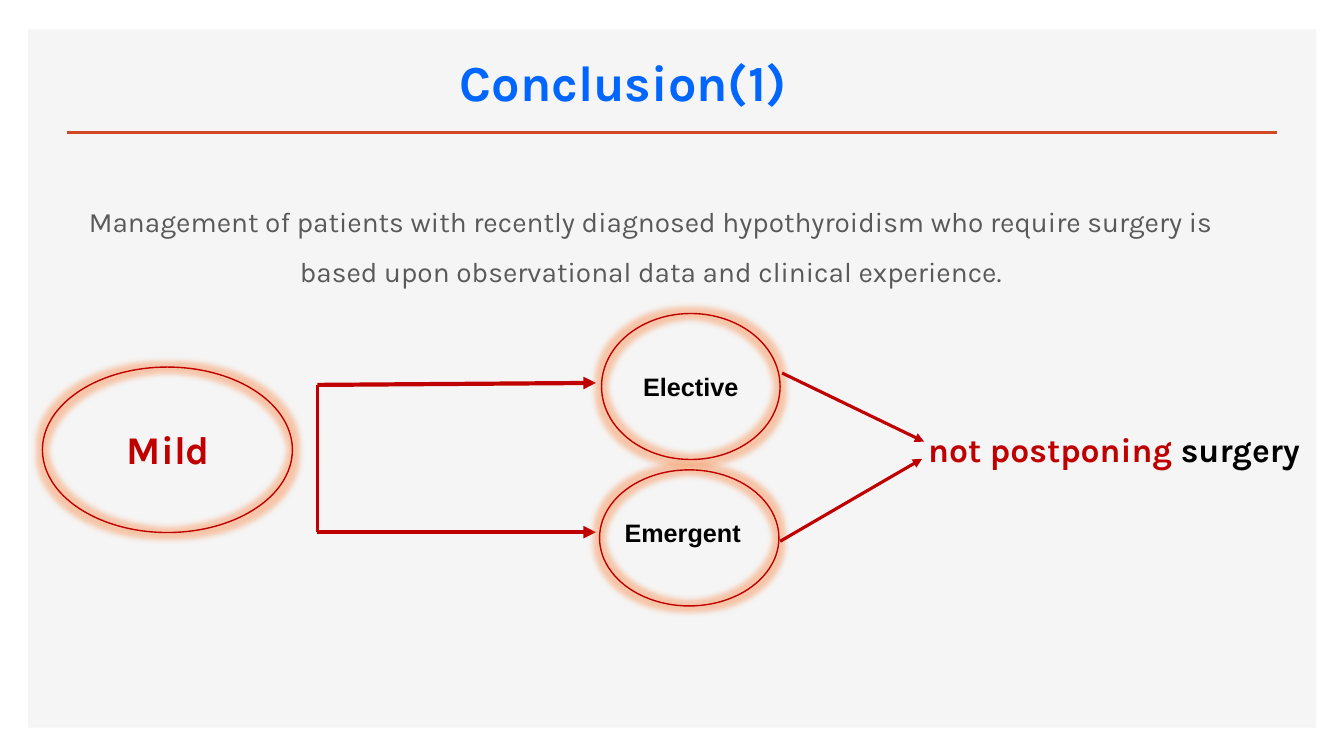
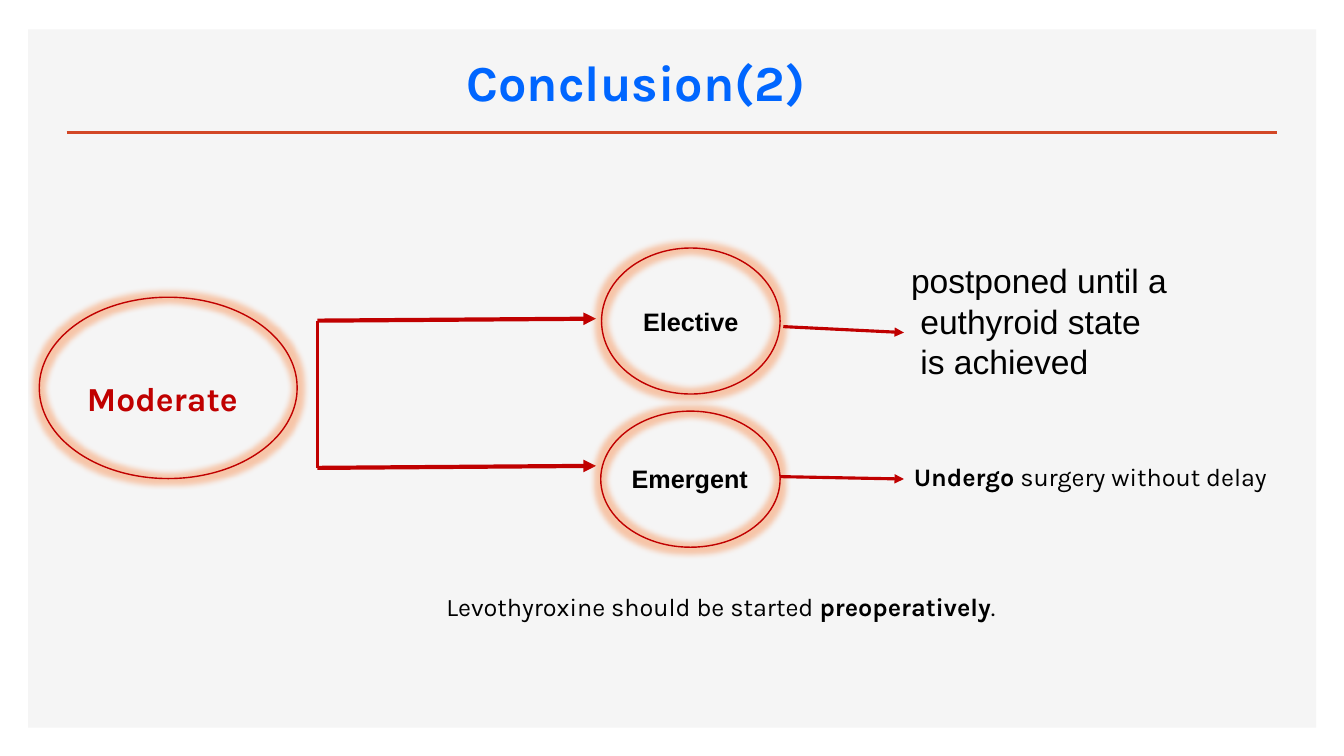
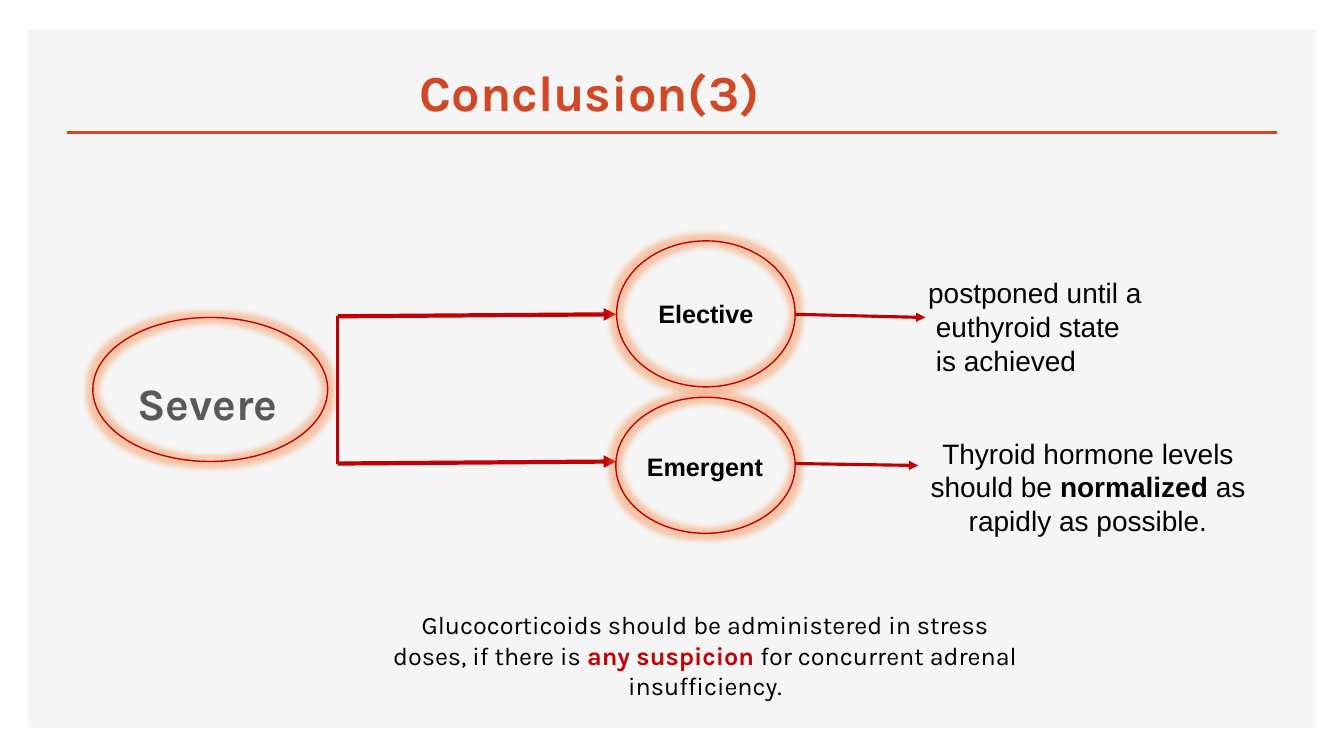
from pptx import Presentation
from pptx.dml.color import RGBColor
from pptx.enum.shapes import MSO_CONNECTOR, MSO_SHAPE
from pptx.enum.text import MSO_ANCHOR as ANCHOR, PP_ALIGN as ALIGN
from pptx.oxml import parse_xml
from pptx.oxml.ns import nsdecls, qn
from pptx.util import Cm, Pt
from lxml import etree

COLORS = {
    "panel": "F5F5F5", "orange": "D24726", "blue": "0066FF", "red": "C00000",
    "gray": "595959", "black": "000000", "glow": "F97E36",
}
HEAD, BODY = "Karla", "Arial"


def rgb(name):
    return RGBColor.from_string(COLORS[name])


class Deck:
    """Holds the style and the current slide. All lengths are in centimetres."""

    def __init__(self):
        self.prs = Presentation()
        self.prs.slide_width, self.prs.slide_height = Cm(33.87), Cm(19.05)
        self.s = None

    def slide(self, title, x, y=1.17, color="blue"):
        """Start a slide with the shared panel, rule and title."""
        self.s = self.prs.slides.add_slide(self.prs.slide_layouts[6])
        panel = self.shape(MSO_SHAPE.RECTANGLE, 0.71, 0.74, 32.46, 17.6)
        panel.fill.solid()
        panel.fill.fore_color.rgb = rgb("panel")
        panel.line.fill.background()
        self.line((1.68, 3.33), (32.18, 3.33), 2, "orange")
        self.text((x, y, 19.1, 1.78), [[(title, color, True)]], 36,
                  align=ALIGN.CENTER, anchor=ANCHOR.BOTTOM)

    def shape(self, kind, x, y, w, h):
        sp = self.s.shapes.add_shape(kind, Cm(x), Cm(y), Cm(w), Cm(h))
        sp.shadow.inherit = False
        return sp

    def add_runs(self, tf, paras, size, font, align, anchor, spacing=None):
        """Fill a frame; each paragraph is a list of (text, colour, bold) runs."""
        tf.vertical_anchor = anchor
        for i, runs in enumerate(paras):
            p = tf.paragraphs[0] if i == 0 else tf.add_paragraph()
            p.alignment = align
            if spacing:
                p.line_spacing = spacing
            for words, color, bold in runs:
                r = p.add_run()
                r.text = words
                r.font.size, r.font.name, r.font.bold = Pt(size), font, bold
                r.font.color.rgb = rgb(color)

    def text(self, box, paras, size, font=HEAD, align=ALIGN.LEFT,
             anchor=ANCHOR.TOP, spacing=None, wrap=True):
        tf = self.s.shapes.add_textbox(*map(Cm, box)).text_frame
        tf.word_wrap = wrap
        self.add_runs(tf, paras, size, font, align, anchor, spacing)

    def oval(self, x, y, w, h, runs=None, size=18, font=BODY,
             align=ALIGN.CENTER, spacing=None):
        """Outlined ellipse with a soft glow."""
        sp = self.shape(MSO_SHAPE.OVAL, x, y, w, h)
        sp.fill.background()
        sp.line.color.rgb, sp.line.width = rgb("red"), Pt(1)
        effects = sp._element.spPr.find(qn("a:effectLst"))
        effects.append(parse_xml(
            f'<a:glow {nsdecls("a")} rad="101600"><a:srgbClr val="{COLORS["glow"]}">'
            '<a:alpha val="40000"/></a:srgbClr></a:glow>'))
        if runs:
            self.add_runs(sp.text_frame, [runs], size, font, align, ANCHOR.MIDDLE,
                          spacing)

    def line(self, start, end, width=2.25, color="red", arrow=False):
        c = self.s.shapes.add_connector(MSO_CONNECTOR.STRAIGHT, *map(Cm, start + end))
        c.line.color.rgb, c.line.width = rgb(color), Pt(width)
        sp_pr = c._element.spPr
        if arrow:
            etree.SubElement(sp_pr.find(qn("a:ln")), qn("a:tailEnd"), type="triangle")
        etree.SubElement(sp_pr, qn("a:effectLst"))

    def fork(self, x, y, low_rise=0.05):
        """Vertical spine with one arrow to each kind of surgery."""
        low = y + 3.71
        self.line((x, y), (x, low))
        self.line((x, y), (x + 7.02, y - 0.05), 3, arrow=True)
        self.line((x, low), (x + 7.02, low - low_rise), 3, arrow=True)

    def surgeries(self, elective, emergent, label):
        """Elective and emergent ovals, given their top left corners."""
        self.oval(*elective, 4.5, 3.68, [("Elective", "black", True)])
        self.oval(*emergent, 4.52, 3.43)
        self.text((*label, 3.48, 1.02), [[("Emergent", "black", True)]], 18,
                  BODY, wrap=False)

    def postponed(self, x, y, size):
        lines = ("postponed until a", " euthyroid state", " is achieved")
        self.text((x, y, 9.5, 3.2), [[(t, "black", False)] for t in lines], size, BODY)


def main():
    d = Deck()

    # Mild
    d.slide("Conclusion(1)", 6.15)
    d.text((1.07, 4.6, 30.68, 3), [[(
        "Management of patients with recently diagnosed hypothyroidism who require "
        "surgery is based upon observational data and clinical experience.",
        "gray", False)]], 20, align=ALIGN.CENTER, spacing=1.5)
    d.oval(1.07, 9.25, 6.3, 4.17)
    d.text((2.95, 10.59, 2.67, 1.45), [[("Mild", "red", True)]], 28, wrap=False)
    d.fork(8, 9.7, low_rise=0)
    d.surgeries((15.16, 7.9), (15.11, 11.84), (15.49, 12.9))
    d.line((19.71, 9.4), (23.29, 11.13), arrow=True)
    d.line((19.66, 13.64), (23.24, 11.56), arrow=True)
    d.text((23.14, 10.69, 10.19, 1.27),
           [[("not postponing ", "red", True), ("surgery", "black", True)]], 24)

    # Moderate
    d.slide("Conclusion(2)", 6.48)
    d.oval(0.99, 7.49, 6.5, 4.57, [("Moderate", "red", True)], 24, HEAD,
           ALIGN.LEFT, 1.5)
    d.fork(8, 8.08)
    d.surgeries((15.16, 6.25), (15.14, 10.36), (15.67, 11.56))
    d.line((19.74, 8.23), (22.78, 8.38), arrow=True)
    d.line((19.66, 12.01), (22.78, 12.07), arrow=True)
    d.postponed(22.71, 6.43, 24)
    d.text((22.78, 11.51, 9.45, 1.02),
           [[("Undergo", "black", True), (" surgery without delay", "black", False)]],
           18, wrap=False)
    d.text((11, 14.78, 14.58, 1.02),
           [[("Levothyroxine should be started ", "black", False),
             ("preoperatively", "black", True), (".", "black", False)]],
           18, wrap=False)

    # Severe
    d.slide("Conclusion(3)", 5.31, 1.4, "orange")
    d.oval(2.34, 8, 5.92, 3.63, [("Severe", "gray", True)], 32, HEAD,
           ALIGN.LEFT, 1.5)
    d.fork(8.51, 7.97)
    d.surgeries((15.54, 6.07), (15.52, 10.01), (16.05, 11.25))
    d.line((20.04, 7.92), (23.32, 8), arrow=True)
    d.line((20.04, 11.68), (23.14, 11.73), arrow=True)
    d.postponed(23.14, 6.83, 20)
    d.text((22.53, 10.87, 9.78, 2.82),
           [[("Thyroid hormone levels should be ", "black", False),
             ("normalized", "black", True),
             (" as rapidly as possible.", "black", False)]],
           20, BODY, ALIGN.CENTER)
    d.text((9.3, 15.24, 16.94, 2.57),
           [[("Glucocorticoids should be administered in stress", "black", False)],
            [("doses, if there is ", "black", False), ("any suspicion ", "red", True),
             ("for concurrent adrenal", "black", False)],
            [("insufficiency.", "black", False)]],
           18, align=ALIGN.CENTER)

    d.prs.save("out.pptx")


if __name__ == "__main__":
    main()
